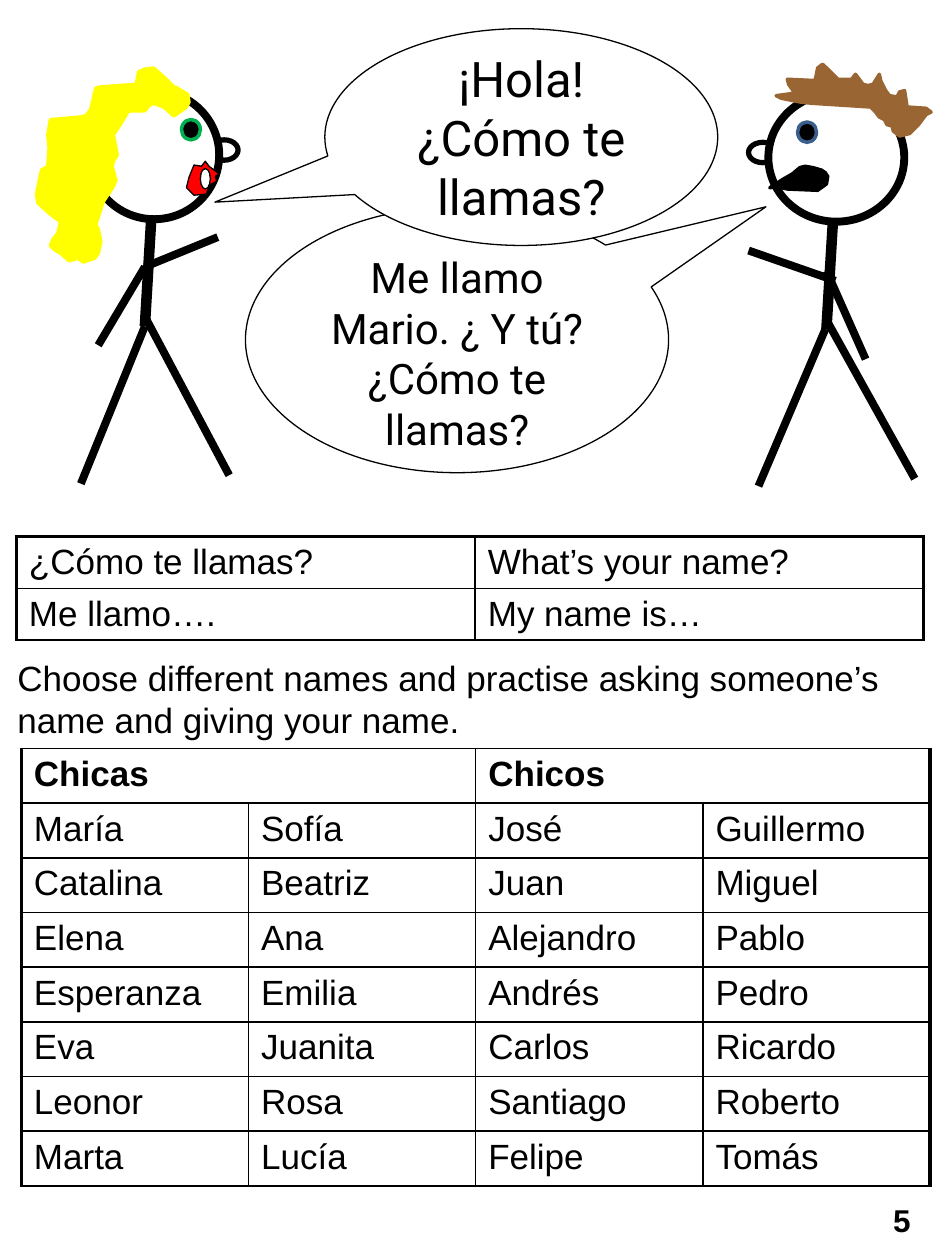
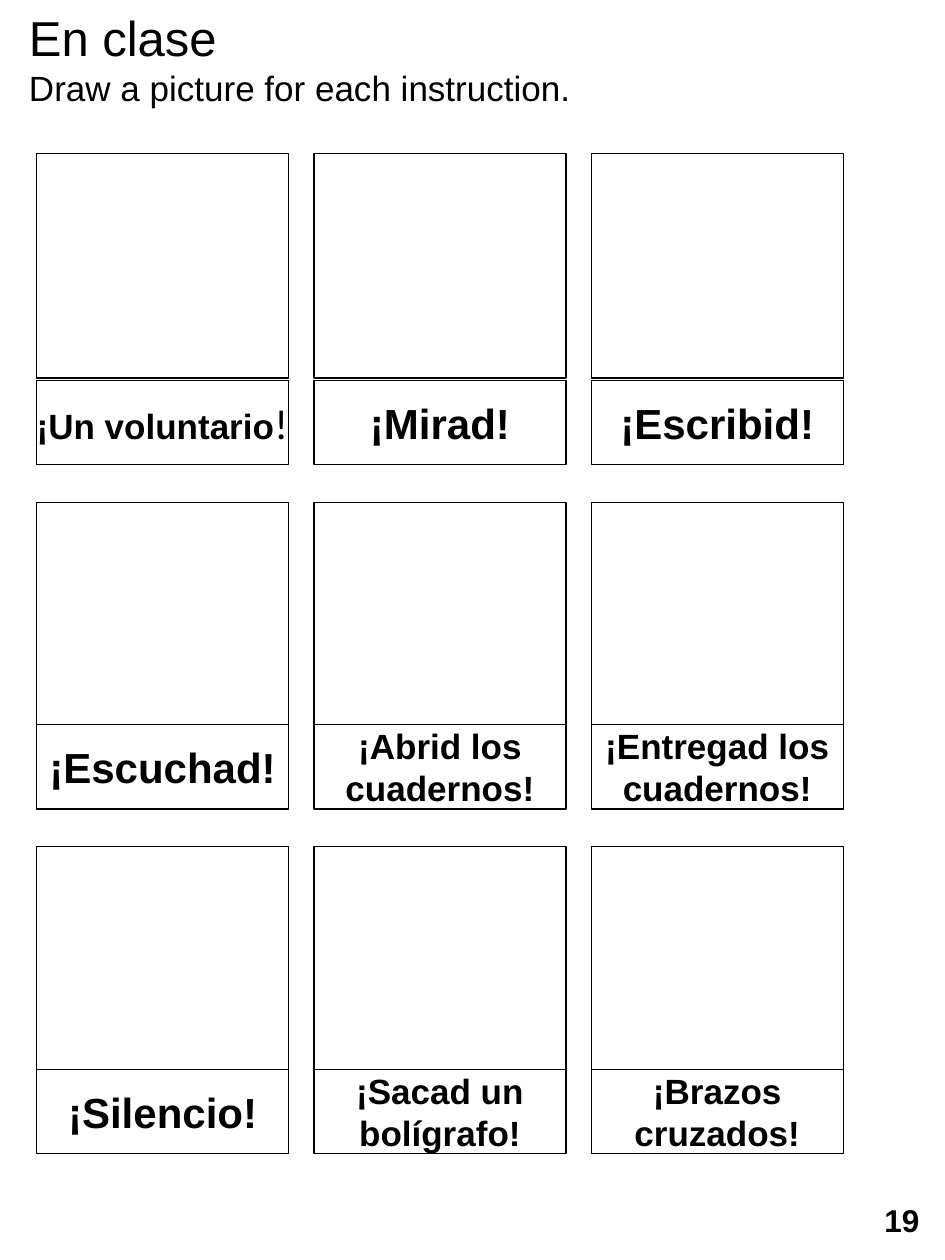
from lxml import etree
from pptx import Presentation, util as u
from pptx.dml.color import RGBColor
from pptx.enum import shapes, text
from pptx.oxml.ns import qn

BLACK, WHITE = "000000", "FFFFFF"
HAIRLINE, OUTLINE, THICK = 0.75, 1, 2.25
CENTER, LEFT = text.PP_ALIGN.CENTER, text.PP_ALIGN.LEFT
MIDDLE, TOP = text.MSO_ANCHOR.MIDDLE, text.MSO_ANCHOR.TOP
PRESET = shapes.MSO_SHAPE
OUTLINE_UNIT = u.Cm(2.54) / 100  # outline points are hundredths of an inch


def color(value):
    return RGBColor.from_string(value)


class Booklet:
    """Holds the shared style, the deck and the page being filled."""

    font = "Arial"

    def __init__(self):
        self.deck = Presentation()
        self.deck.slide_width = u.Cm(19.05)
        self.deck.slide_height = u.Cm(25.4)

    def new_page(self, number, titled=False):
        self.page = self.deck.slides.add_slide(self.deck.slide_layouts[5 if titled else 6])
        self.target = self.page.shapes
        badge = self.shape(PRESET.ROUNDED_RECTANGLE, (17.48, 24, 1.4, 1.19))
        self.set_text(badge.text_frame, str(number), 18, bold=True, align=CENTER, anchor=MIDDLE)

    def start_group(self):
        self.target = self.page.shapes.add_group_shape().shapes

    def end_group(self):
        self.target = self.page.shapes

    def paint(self, item, fill, line, width):
        item.shadow.inherit = False
        if fill:
            item.fill.solid()
            item.fill.fore_color.rgb = color(fill)
        else:
            item.fill.background()
        if line:
            item.line.color.rgb = color(line)
            item.line.width = u.Pt(width)
        else:
            item.line.fill.background()
        return item

    def shape(self, preset, place, fill=None, line=None, width=HAIRLINE):
        item = self.target.add_shape(preset, *map(u.Cm, place))
        return self.paint(item, fill, line, width)

    def outline(self, points, fill, line, width):
        builder = self.target.build_freeform(*points[0], scale=OUTLINE_UNIT)
        builder.add_line_segments(points[1:], close=True)
        return self.paint(builder.convert_to_shape(), fill, line, width)

    def stroke(self, ends, width):
        limb = self.target.add_connector(shapes.MSO_CONNECTOR.STRAIGHT, *map(u.Cm, ends))
        limb.line.color.rgb = color(BLACK)
        limb.line.width = u.Pt(width)
        etree.SubElement(limb._element.spPr, qn("a:effectLst"))

    def set_text(self, frame, words, size, bold=False, align=LEFT, anchor=TOP, font=None,
                 inset=None):
        frame.text = words
        frame.word_wrap = True
        frame.vertical_anchor = anchor
        if inset is not None:
            frame.margin_left = frame.margin_right = u.Cm(inset)
            frame.margin_top = frame.margin_bottom = u.Cm(inset)
        for para in frame.paragraphs:
            para.alignment = align
            for span in para.runs:
                self.style(span, size, bold, font)

    def style(self, span, size, bold=False, font=None):
        span.font.name = font or self.font
        span.font.size = u.Pt(size)
        span.font.bold = bold
        span.font.color.rgb = color(BLACK)

    def title(self, heading, instruction, place):
        box = self.page.shapes.title
        box.left, box.top, box.width, box.height = map(u.Cm, place)
        self.set_text(box.text_frame, f"{heading}\v{instruction}", 28)
        box.text_frame.auto_size = text.MSO_AUTO_SIZE.NONE
        self.style(box.text_frame.paragraphs[0].runs[1], 20)

    def textbox(self, words, place, size):
        box = self.target.add_textbox(*map(u.Cm, place))
        self.set_text(box.text_frame, words, size)

    def bubble(self, words, place, tail, size, anchor, fill=None):
        balloon = self.shape(PRESET.OVAL_CALLOUT, place, fill, BLACK)
        balloon.adjustments[0], balloon.adjustments[1] = tail
        self.set_text(balloon.text_frame, words, size, align=CENTER, anchor=anchor, font="Roboto")

    def table(self, rows, corner, columns, row_height, top_width, header=False):
        """A None in a row extends the cell to its left."""
        place = *corner, sum(columns), row_height * len(rows)
        grid = self.target.add_table(len(rows), len(columns), *map(u.Cm, place)).table
        grid.first_row = grid.horz_banding = False
        for column, width in zip(grid.columns, columns):
            column.width = u.Cm(width)
        for r, row in enumerate(rows):
            for c, words in enumerate(row):
                cell = grid.cell(r, c)
                if words is None:
                    grid.cell(r, c - 1).merge(cell)
                else:
                    self.set_text(cell.text_frame, words, 20, bold=header and r == 0)
        for r in range(len(rows)):
            for c in range(len(columns)):
                cell = grid.cell(r, c)
                at_end = c + cell.span_width >= len(columns)
                self.borders(cell, L=THICK if c == 0 else OUTLINE, R=THICK if at_end else OUTLINE,
                             T=top_width if r == 0 else OUTLINE, B=OUTLINE)
                cell.fill.background()

    def borders(self, cell, **sides):
        properties = cell._tc.get_or_add_tcPr()
        for side, width in sides.items():
            edge = etree.SubElement(properties, qn(f"a:ln{side}"), w=str(int(u.Pt(width))))
            solid = etree.SubElement(edge, qn("a:solidFill"))
            etree.SubElement(solid, qn("a:srgbClr"), val=BLACK)

    def figure(self, ear, head, spine, limbs, eye, iris, mouth, hair, hair_color):
        """A stick person: mouth is a list of (method, arguments) pairs."""
        self.start_group()
        self.shape(PRESET.OVAL, ear, None, BLACK, 3)
        self.shape(PRESET.OVAL, head, WHITE, BLACK, 4.5)
        self.stroke(spine, 6)
        for limb in limbs:
            self.stroke(limb, 4.5)
        self.shape(PRESET.OVAL, eye, BLACK, iris, 2)
        for draw, arguments in mouth:
            draw(*arguments)
        self.outline(hair, hair_color, hair_color, 2)
        self.end_group()


BOY_MOUTH = [(616, 148), (611, 149), (622, 142), (629, 138), (635, 133), (639, 132), (645, 133),
             (652, 135), (655, 137), (657, 140), (656, 146), (649, 151), (625, 150)]
BOY_HAIR = [
    (714, 108), (722, 106), (729, 99), (735, 91), (739, 89), (735, 86), (720, 85), (718, 72),
    (714, 73), (712, 77), (706, 76), (703, 72), (699, 64), (698, 59), (693, 67), (689, 68),
    (685, 67), (679, 59), (676, 63), (665, 63), (657, 55), (653, 51), (649, 54), (647, 64),
    (625, 63), (626, 67), (631, 74), (616, 76), (620, 78), (635, 81), (644, 82), (691, 85),
    (695, 89), (698, 93), (702, 95), (704, 99), (708, 100), (709, 104)]
GIRL_LIPS = [(174, 138), (166, 132), (163, 128), (160, 132), (154, 131), (150, 141), (148, 149),
             (154, 155), (164, 154), (166, 147), (172, 144), (171, 140)]
GIRL_HAIR = [
    (145, 76), (136, 67), (132, 63), (122, 54), (115, 55), (110, 57), (109, 63), (108, 67),
    (80, 69), (76, 70), (72, 87), (68, 92), (63, 93), (40, 95), (38, 107), (39, 117), (38, 132),
    (33, 135), (32, 140), (30, 149), (29, 154), (30, 161), (40, 170), (48, 176), (46, 185),
    (42, 190), (40, 195), (43, 198), (48, 201), (55, 207), (62, 205), (66, 208), (75, 205),
    (78, 201), (80, 192), (78, 182), (76, 178), (82, 160), (90, 148), (92, 143), (89, 132),
    (90, 128), (93, 123), (90, 107), (96, 98), (102, 88), (115, 88), (118, 84), (122, 82),
    (130, 85), (138, 92), (148, 85), (150, 81), (149, 75), (139, 69)]

NAMES = [
    ["Chicas", None, "Chicos", None],
    ["María", "Sofía", "José", "Guillermo"],
    ["Catalina", "Beatriz", "Juan", "Miguel"],
    ["Elena", "Ana", "Alejandro", "Pablo"],
    ["Esperanza", "Emilia", "Andrés", "Pedro"],
    ["Eva", "Juanita", "Carlos", "Ricardo"],
    ["Leonor", "Rosa", "Santiago", "Roberto"],
    ["Marta", "Lucía", "Felipe", "Tomás"]]

# Each row: top of the drawing frame, top of the caption, captions with sizes
INSTRUCTIONS = [
    (3.1, 7.67, [("¡Un voluntario", 20), ("¡Mirad!", 24), ("¡Escribid!", 24)]),
    (10.13, 14.61, [("¡Escuchad!", 24), ("¡Abrid los cuadernos!", 20),
                    ("¡Entregad los cuadernos!", 20)]),
    (17.07, 21.56, [("¡Silencio!", 24), ("¡Sacad un bolígrafo!", 20), ("¡Brazos cruzados!", 20)])]


def names_page(book):
    book.new_page(5)

    # Dialogue between two stick people
    book.bubble("Me llamo Mario. ¿ Y tú? ¿Cómo te llamas?", (4.95, 4.17, 8.53, 5.36),
                (0.73, -0.5), 24, TOP)
    book.figure(
        ear=(15.09, 2.87, 0.58, 0.41), head=(15.49, 1.88, 2.74, 2.59),
        spine=(16.79, 4.47, 16.66, 6.63),
        limbs=[(16.66, 6.45, 18.44, 9.65), (16.64, 6.63, 15.29, 9.8),
               (16.84, 5.66, 15.09, 5.05), (16.66, 5.46, 17.45, 7.24)],
        eye=(16.08, 2.46, 0.38, 0.41), iris="3A5F8C",
        mouth=[(book.outline, (BOY_MOUTH, BLACK, BLACK, 2))],
        hair=BOY_HAIR, hair_color="996633")
    book.figure(
        ear=(4.24, 2.82, 0.56, 0.41), head=(1.8, 1.83, 2.62, 2.59),
        spine=(3.05, 4.39, 2.92, 6.58),
        limbs=[(2.92, 6.38, 4.62, 9.58), (2.92, 6.58, 1.63, 9.75),
               (2.92, 5.38, 4.39, 4.78), (2.92, 5.38, 1.98, 6.96)],
        eye=(3.66, 2.41, 0.38, 0.41), iris="00B050",
        mouth=[(book.outline, (GIRL_LIPS, "FF0000", BLACK, HAIRLINE)),
               (book.shape, (PRESET.OVAL, (4.04, 3.4, 0.2, 0.41), WHITE, BLACK))],
        hair=GIRL_HAIR, hair_color="FFFF00")
    book.bubble("¡Hola! ¿Cómo te llamas?", (6.55, 0.58, 7.92, 4.37), (-0.78, 0.3), 28, MIDDLE, WHITE)

    # Phrases and names to practise
    book.table([["¿Cómo te llamas?", "What’s your name?"], ["Me llamo….", "My name is…"]],
               (0.33, 10.82), [9.25, 9.04], 1.04, THICK)
    book.textbox("Choose different names and practise asking someone’s name and giving your name.",
                 (0.1, 13.11, 18.67, 1.96), 20)
    book.table(NAMES, (0.43, 15.09), [4.58] * 4, 1.04, OUTLINE, header=True)


def classroom_page(book):
    book.new_page(19, titled=True)
    book.title("En clase", "Draw a picture for each instruction.", (0.33, 0.03, 18.34, 2.31))

    # Drawing frames with captions
    for frame_top, caption_top, captions in INSTRUCTIONS:
        for column, (words, size) in enumerate(captions):
            left = 0.74 + 5.59 * column
            book.shape(PRESET.RECTANGLE, (left, frame_top, 5.08, 4.52), WHITE, BLACK)
            caption = book.shape(PRESET.RECTANGLE, (left, caption_top, 5.08, 1.7), WHITE, BLACK)
            open_ended = not words.endswith("!")
            book.set_text(caption.text_frame, words, size, bold=True, anchor=MIDDLE, inset=0,
                          align=LEFT if open_ended else CENTER)
            para = caption.text_frame.paragraphs[0]
            if open_ended:  # the closing mark has its own lettering
                mark = para.add_run()
                mark.text = "!"
                book.style(mark, 24, font="Calibri")
            else:
                para.space_after = u.Pt(10)


def main():
    book = Booklet()
    names_page(book)
    classroom_page(book)
    book.deck.save("out.pptx")


if __name__ == "__main__":
    main()
